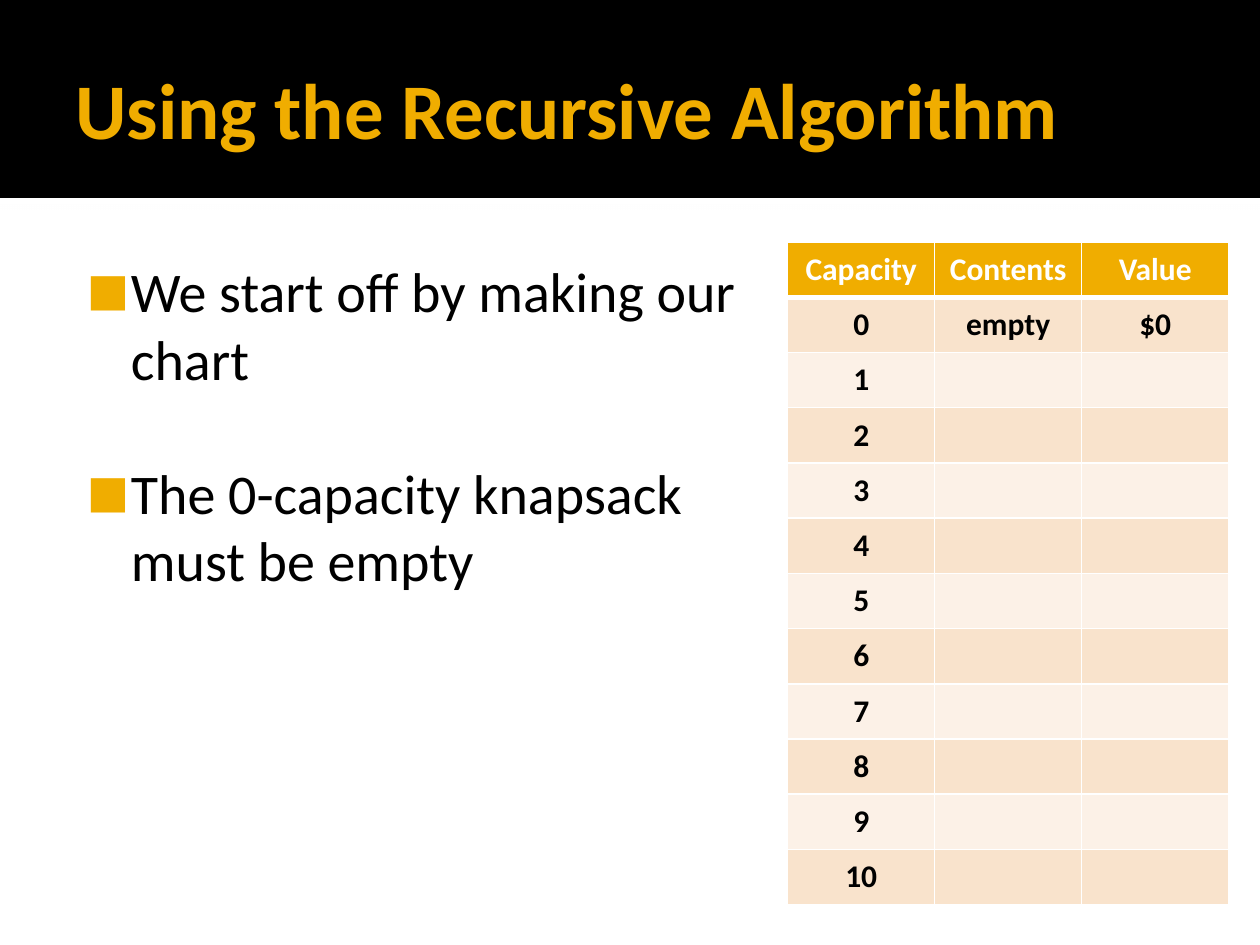
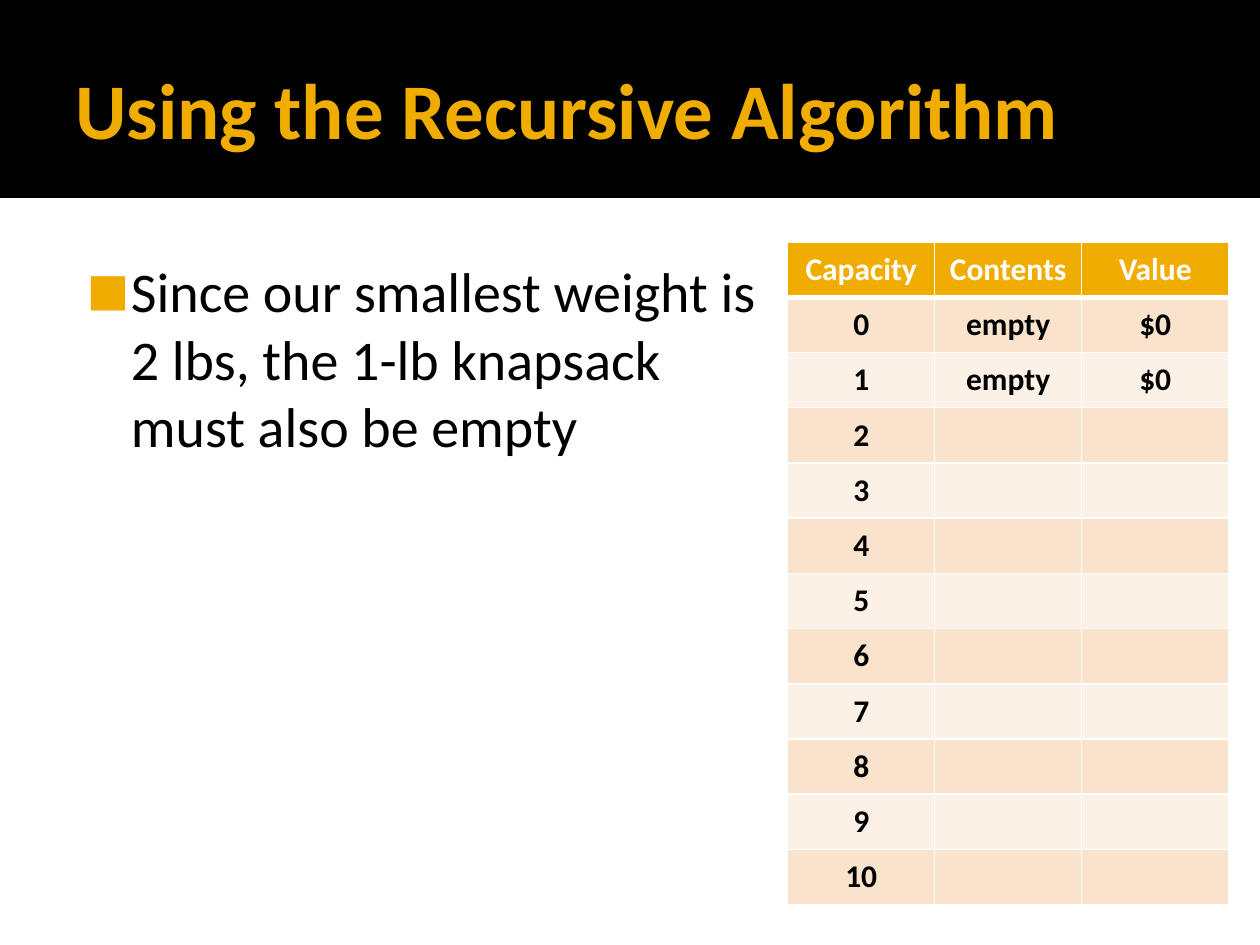
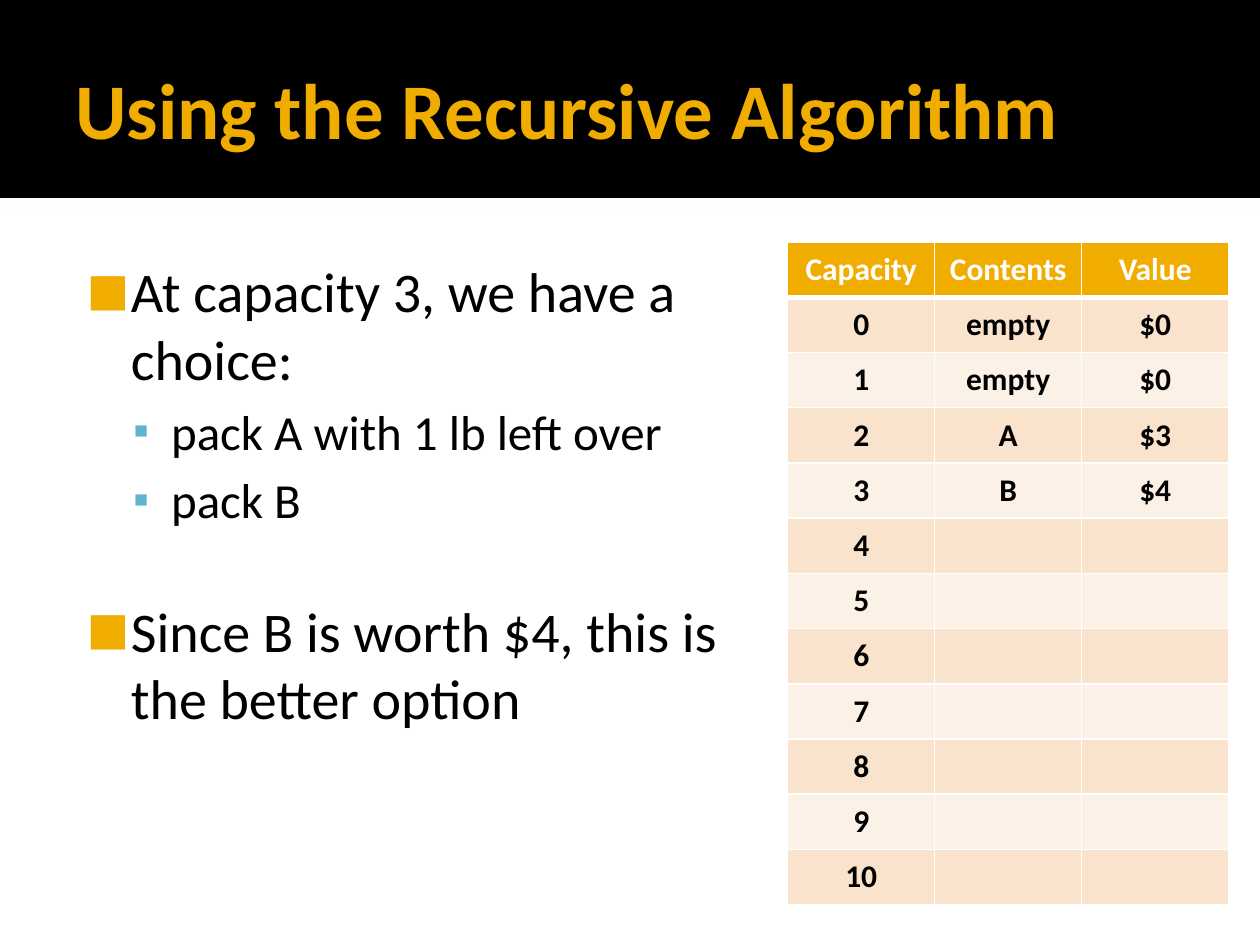
from dataclasses import dataclass

from lxml.etree import SubElement
from pptx import Presentation
from pptx.dml.color import RGBColor
from pptx.enum.shapes import MSO_SHAPE
from pptx.enum.text import MSO_ANCHOR, PP_ALIGN
from pptx.oxml.ns import qn
from pptx.util import Cm, Pt

GOLD = RGBColor(0xF0, 0xAD, 0x00)
BLUE = RGBColor(0x60, 0xB5, 0xCC)
BLACK = RGBColor(0x00, 0x00, 0x00)
WHITE = RGBColor(0xFF, 0xFF, 0xFF)
PEACH = RGBColor(0xF9, 0xE3, 0xCC)
CREAM = RGBColor(0xFC, 0xF1, 0xE7)

FONT = "Calibri"
TITLE = "Using the Recursive Algorithm"
HEADER = ("Capacity", "Contents", "Value")
MAX_CAPACITY = 10
SLIDE_W, SLIDE_H = Cm(25.4), Cm(19.05)
BAND_H = Cm(3.99)
SECTION_GAP = Pt(38.5)


@dataclass(frozen=True)
class Level:
    size: int
    left: Cm
    hang: Cm
    before: Pt
    bullet: str
    color: RGBColor
    scale: int


MAIN = Level(32, Cm(1.22), Cm(0.89), Pt(0), "■", GOLD, 80)
SUB = Level(28, Cm(2.03), Cm(0.76), Pt(5.6), "▪", BLUE, 90)


@dataclass(frozen=True)
class Bullet:
    text: str
    level: Level = MAIN
    new_section: bool = False


@dataclass(frozen=True)
class Step:
    bullets: tuple[Bullet, ...]
    solved: tuple[tuple[str, str], ...]


EMPTY = ("empty", "$0")
STEPS = (
    Step(
        (
            Bullet("We start off by making our chart"),
            Bullet("The 0-capacity knapsack must be empty", new_section=True),
        ),
        (EMPTY,),
    ),
    Step(
        (Bullet("Since our smallest weight is 2 lbs, the 1-lb knapsack must also be empty"),),
        (EMPTY, EMPTY),
    ),
    Step(
        (
            Bullet("At capacity 3, we have a choice:"),
            Bullet("pack A with 1 lb left over", SUB),
            Bullet("pack B", SUB),
            Bullet("Since B is worth $4, this is the better option", new_section=True),
        ),
        (EMPTY, EMPTY, ("A", "$3"), ("B", "$4")),
    ),
)


def style_runs(p, size: float, color: RGBColor, bold: bool = False) -> None:
    for r in p.runs:
        r.font.name = FONT
        r.font.size = Pt(size)
        r.font.bold = bold
        r.font.color.rgb = color


def add_fill(parent, color: RGBColor):
    fill = SubElement(parent, qn("a:solidFill"))
    return SubElement(fill, qn("a:srgbClr"), val=str(color))


def add_bar(s, top: int, height: int, color: RGBColor):
    sp = s.shapes.add_shape(MSO_SHAPE.RECTANGLE, 0, top, SLIDE_W, height)
    sp.shadow.inherit = False
    sp.fill.solid()
    sp.fill.fore_color.rgb = color
    sp.line.fill.background()
    return sp


def add_header_band(s) -> None:
    strip = add_bar(s, BAND_H, Cm(0.13), WHITE)
    effects = strip._element.spPr.find(qn("a:effectLst"))
    shadow = SubElement(
        effects, qn("a:outerShdw"), blurRad=str(Pt(2.5)), dist=str(Pt(0.8)),
        dir="5400000", algn="tl", rotWithShape="0",
    )
    SubElement(add_fill(shadow, BLACK), qn("a:alpha"), val="60000")
    add_bar(s, 0, BAND_H, BLACK)


def add_text_frame(s, left: Cm, top: Cm, width: Cm, height: Cm, insets: tuple[float, ...]):
    tf = s.shapes.add_textbox(left, top, width, height).text_frame
    tf.word_wrap = True
    tf.margin_left, tf.margin_top, tf.margin_right, tf.margin_bottom = map(Cm, insets)
    return tf


def add_title(s) -> None:
    tf = add_text_frame(s, Cm(1.27), Cm(0.43), Cm(22.86), Cm(3.48), (0.25, 0.13, 0.13, 0.13))
    tf.vertical_anchor = MSO_ANCHOR.MIDDLE
    tf.text = TITLE
    style_runs(tf.paragraphs[0], 45, GOLD, bold=True)


def set_bullet(p, level: Level) -> None:
    pPr = p._p.get_or_add_pPr()
    pPr.set("marL", str(level.left))
    pPr.set("indent", str(-level.hang))
    color = SubElement(pPr, qn("a:buClr"))
    SubElement(color, qn("a:srgbClr"), val=str(level.color))
    SubElement(pPr, qn("a:buSzPct"), val=str(level.scale * 1000))
    SubElement(pPr, qn("a:buFont"), typeface=FONT)
    SubElement(pPr, qn("a:buChar"), char=level.bullet)


def add_bullets(s, bullets: tuple[Bullet, ...]) -> None:
    tf = add_text_frame(s, Cm(1.27), Cm(4.93), Cm(14.4), Cm(12.85), (0.15, 0.25, 0.25, 0.13))
    tf.text = "\n".join(b.text for b in bullets)
    for p, b in zip(tf.paragraphs, bullets):
        p.level = 1 if b.level is SUB else 0
        p.space_before = SECTION_GAP if b.new_section else b.level.before
        set_bullet(p, b.level)
        style_runs(p, b.level.size, BLACK)


def set_borders(cell, top: float, bottom: float) -> None:
    tcPr = cell._tc.get_or_add_tcPr()
    for side, weight in (("L", 1), ("R", 1), ("T", top), ("B", bottom)):
        line = SubElement(tcPr, qn(f"a:ln{side}"), w=str(Pt(weight)))
        add_fill(line, WHITE)


def add_capacity_table(s, solved: tuple[tuple[str, str], ...]) -> None:
    blanks = (("", ""),) * (MAX_CAPACITY + 1 - len(solved))
    rows = [HEADER] + [(str(n), *pair) for n, pair in enumerate(solved + blanks)]
    width, height = Cm(8.89), Cm(13.36)
    table = s.shapes.add_table(
        len(rows), len(HEADER), Cm(15.88), Cm(4.88), width, height
    ).table
    table.horz_banding = False
    for column in table.columns:
        column.width = width // len(HEADER)
    for i, values in enumerate(rows):
        table.rows[i].height = height // len(rows)
        fill = GOLD if i == 0 else PEACH if i % 2 else CREAM
        for j, value in enumerate(values):
            cell = table.cell(i, j)
            set_borders(cell, top=3 if i == 1 else 1, bottom=3 if i == 0 else 1)
            cell.fill.solid()
            cell.fill.fore_color.rgb = fill
            cell.vertical_anchor = MSO_ANCHOR.MIDDLE
            if value:
                cell.text = value
                p = cell.text_frame.paragraphs[0]
                p.alignment = PP_ALIGN.CENTER
                style_runs(p, 18, BLACK if i else WHITE, bold=True)


def main() -> None:
    prs = Presentation()
    prs.slide_width, prs.slide_height = SLIDE_W, SLIDE_H
    for step in STEPS:
        s = prs.slides.add_slide(prs.slide_layouts[6])
        add_header_band(s)
        add_title(s)
        add_bullets(s, step.bullets)
        add_capacity_table(s, step.solved)
    prs.save("out.pptx")


if __name__ == "__main__":
    main()
